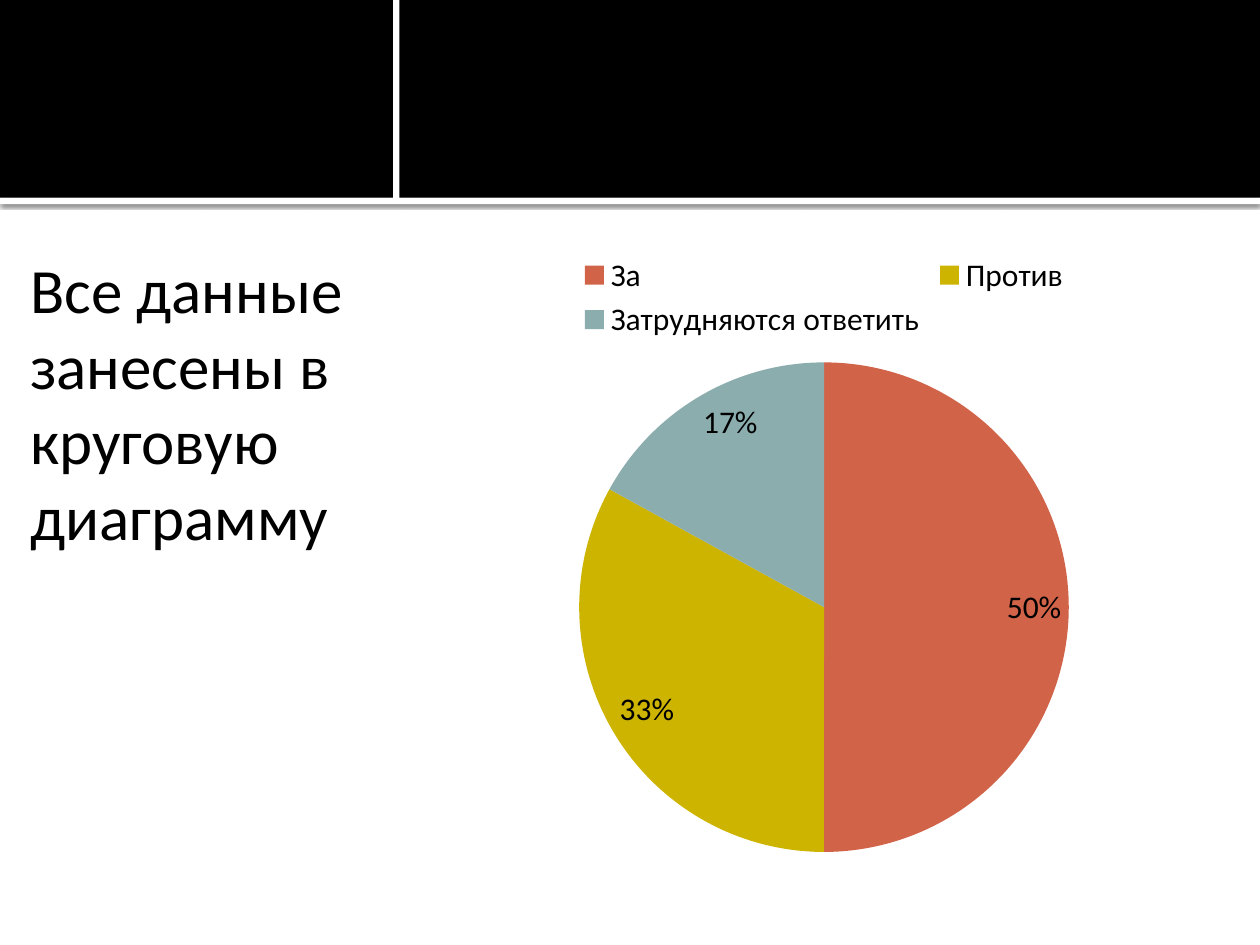
"""Build a slide with a banner, a short text and a pie chart of survey answers."""
from typing import NamedTuple

from lxml import etree
from pptx import Presentation
from pptx.chart.data import CategoryChartData
from pptx.dml.color import RGBColor
from pptx.enum.chart import XL_CHART_TYPE, XL_LABEL_POSITION, XL_LEGEND_POSITION
from pptx.enum.shapes import MSO_SHAPE
from pptx.enum.text import MSO_ANCHOR, PP_ALIGN
from pptx.oxml import parse_xml
from pptx.oxml.ns import nsdecls, qn
from pptx.util import Inches, Pt

RECTANGLE = MSO_SHAPE.RECTANGLE
PIE = XL_CHART_TYPE.PIE
INSIDE_END = XL_LABEL_POSITION.INSIDE_END
LEGEND_TOP = XL_LEGEND_POSITION.TOP
ANCHOR_TOP = MSO_ANCHOR.TOP
ALIGN_LEFT = PP_ALIGN.LEFT

WIDTH, HEIGHT = 10, 7.5
FONT = "Calibri"
COLORS = {
    "black": "000000",
    "white": "FFFFFF",
    "red": "D16349",
    "yellow": "CCB400",
    "teal": "8CADAE",
}


class Area(NamedTuple):
    left: float
    top: float
    width: float
    height: float

    def lengths(self) -> list:
        return [Inches(value) for value in self]


class Bar(NamedTuple):
    area: Area
    color: str
    shadowed: bool = False


class Answer(NamedTuple):
    label: str
    percent: int
    color: str


BANNER_HEIGHT = 1.57
BARS = [
    Bar(Area(0, BANNER_HEIGHT, WIDTH, 0.05), "white", True),
    Bar(Area(0, 0, WIDTH, BANNER_HEIGHT), "black"),
    Bar(Area(3.12, 0, 0.05, 1.59), "white"),
]
ANSWERS = [
    Answer("За", 50, "red"),
    Answer("Против", 33, "yellow"),
    Answer("Затрудняются ответить", 17, "teal"),
]
TEXT_AREA = Area(0.18, 1.89, 2.7, 5)
CHART_AREA = Area(3.3, 1.91, 6.48, 4.99)


def color_of(name: str) -> RGBColor:
    return RGBColor.from_string(COLORS[name])


def style_font(font, size: int) -> None:
    font.name = FONT
    font.size = Pt(size)
    font.color.rgb = color_of("black")


def draw_bar(page, bar: Bar) -> None:
    shape = page.shapes.add_shape(RECTANGLE, *bar.area.lengths())
    shape.fill.solid()
    shape.fill.fore_color.rgb = color_of(bar.color)
    shape.line.fill.background()
    shape.shadow.inherit = False
    if bar.shadowed:
        effects = shape.element.spPr.find(qn("a:effectLst"))
        effects.append(parse_xml(
            f'<a:outerShdw {nsdecls("a")} blurRad="{Pt(2.5)}" dist="{Pt(0.8)}" '
            f'dir="5400000" algn="tl" rotWithShape="0"><a:srgbClr val="{COLORS["black"]}">'
            '<a:alpha val="60000"/></a:srgbClr></a:outerShdw>'))


def write_body(box, text: str) -> None:
    box.left, box.top, box.width, box.height = TEXT_AREA.lengths()
    frame = box.text_frame
    frame.text = text
    frame.word_wrap = True
    frame.vertical_anchor = ANCHOR_TOP
    frame.margin_left, frame.margin_top = Inches(0.06), Inches(0.1)
    frame.margin_right, frame.margin_bottom = Inches(0.1), Inches(0.05)
    para = frame.paragraphs[0]
    para.alignment = ALIGN_LEFT
    para.space_before = Pt(0)
    properties = para._p.get_or_add_pPr()
    properties.set("marL", "0")
    properties.set("indent", "0")
    etree.SubElement(properties, qn("a:buNone"))
    style_font(para.runs[0].font, 36)


def draw_pie(page, answers: list[Answer]) -> None:
    data = CategoryChartData()
    data.categories = [answer.label for answer in answers]
    data.add_series("Series 1", [answer.percent for answer in answers])
    chart = page.shapes.add_chart(PIE, *CHART_AREA.lengths(), data).chart
    style_font(chart.font, 18)
    chart.has_title = False
    chart.has_legend = True
    chart.legend.position = LEGEND_TOP
    chart.legend.include_in_layout = False
    plot = chart.plots[0]
    plot.vary_by_categories = True
    plot.has_data_labels = True
    labels = plot.data_labels
    labels.show_percentage = True
    labels.show_value = False
    labels.number_format = "0%"
    labels.number_format_is_linked = False
    labels.position = INSIDE_END
    style_font(labels.font, 18)
    for index, answer in enumerate(answers):
        fill = plot.series[0].points[index].format.fill
        fill.solid()
        fill.fore_color.rgb = color_of(answer.color)


def main() -> None:
    deck = Presentation()
    deck.slide_width, deck.slide_height = Inches(WIDTH), Inches(HEIGHT)
    page = deck.slides.add_slide(deck.slide_layouts[1])
    page.background.fill.solid()
    page.background.fill.fore_color.rgb = color_of("white")
    title = page.shapes.title.element
    title.getparent().remove(title)
    for bar in BARS:
        draw_bar(page, bar)
    write_body(page.placeholders[1], "Все данные занесены в круговую диаграмму")
    draw_pie(page, ANSWERS)
    deck.save("out.pptx")


if __name__ == "__main__":
    main()
